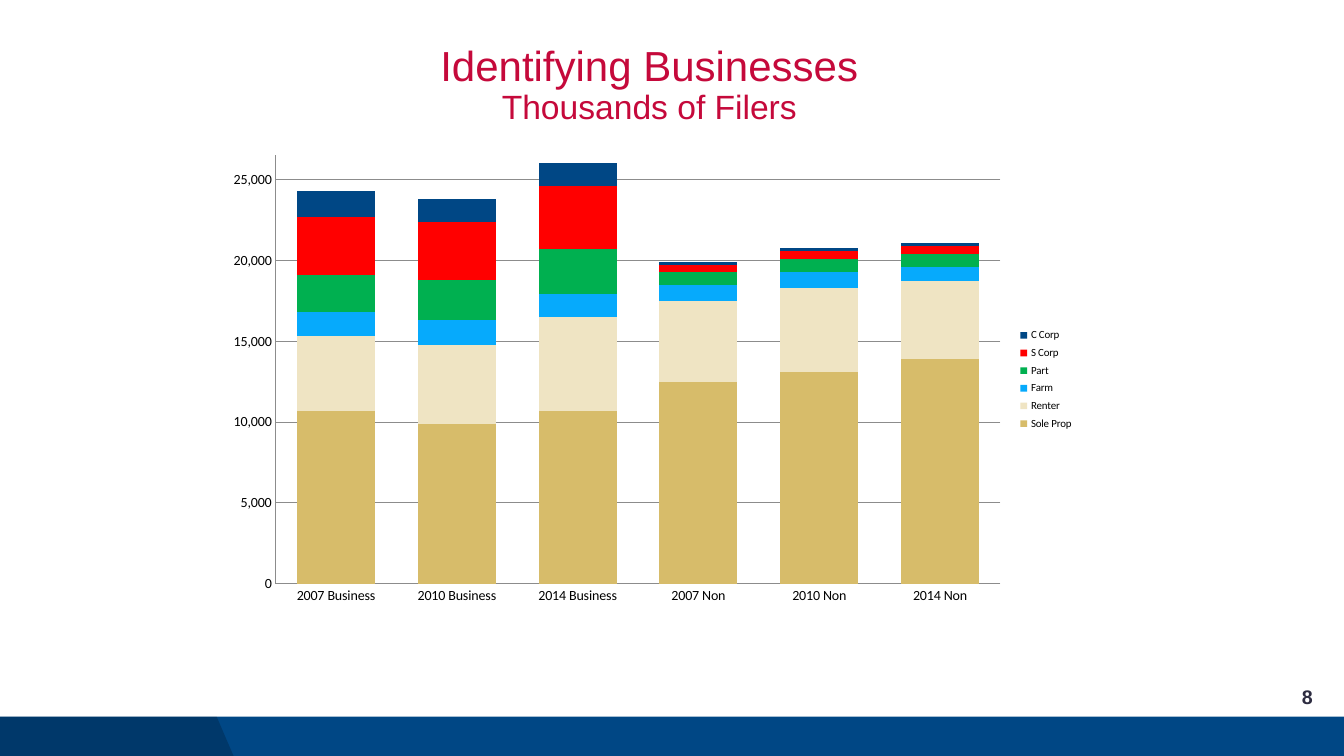
"""Build the slide on identifying businesses by thousands of filers."""
from lxml import etree
from pptx import Presentation, util as u
from pptx.chart.data import CategoryChartData
from pptx.dml.color import RGBColor
from pptx.enum import chart as ch, shapes, text
from pptx.oxml.ns import qn

W, H = u.Inches(13.33), u.Inches(7.5)
COLORS = {
    "title": "C5093B", "number": "2D2C41", "text": "000000", "line": "8C8C8C",
    "band": "004785", "shade": "000000",
    "Sole Prop": "D7BC6A", "Renter": "EFE4C3", "Farm": "06AAFC",
    "Part": "00B050", "S Corp": "FF0000", "C Corp": "004785",
}
CATEGORIES = ["2007 Business", "2010 Business", "2014 Business",
              "2007 Non", "2010 Non", "2014 Non"]
FILERS = {
    "Sole Prop": [10700, 9900, 10700, 12500, 13100, 13900],
    "Renter": [4600, 4900, 5800, 5000, 5200, 4800],
    "Farm": [1500, 1500, 1400, 1000, 1000, 900],
    "Part": [2300, 2500, 2800, 800, 800, 800],
    "S Corp": [3600, 3600, 3900, 400, 500, 500],
    "C Corp": [1600, 1400, 1400, 200, 200, 200],
}


def share(x, y):
    """Turn percentages of the slide's width and height into lengths."""
    return int(W * x / 100), int(H * y / 100)


def box(x, y, w, h):
    """Give left, top, width and height from percentages of the slide."""
    return *share(x, y), *share(w, h)


def rgb(name):
    """Look up a named colour."""
    return RGBColor.from_string(COLORS[name])


def set_all(obj, values):
    """Set attributes from a dict of format values."""
    for name, value in values.items():
        setattr(obj, name, value)


def set_font(font, color, **values):
    """Set a font's colour and other format values."""
    set_all(font, values)
    font.color.rgb = rgb(color)


def paint(sp, color, opacity=None):
    """Fill a shape without line or shadow, optionally see-through."""
    sp.shadow.inherit = False
    sp.fill.solid()
    sp.fill.fore_color.rgb = rgb(color)
    sp.line.fill.background()
    if opacity:
        clr = sp._element.spPr.find(qn("a:solidFill"))[0]
        etree.SubElement(clr, qn("a:alpha"), val=str(opacity * 1000))


def add_footer(s):
    """Draw the bottom band and its darker slanted end."""
    left, top, width, height = box(0, 94.8, 100, 5.6)
    band = s.shapes.add_shape(shapes.MSO_SHAPE.RECTANGLE, left, top, width, height)
    paint(band, "band")
    corners = [share(x, y) for x, y in
               [(0, 94.8), (16.13, 94.8), (17.48, 100.4), (0, 100.4)]]
    fb = s.shapes.build_freeform(*corners[0])
    fb.add_line_segments(corners[1:], close=True)
    paint(fb.convert_to_shape(), "shade", 20)


def add_text(s, place, lines, color, frame, para, **font):
    """Add a text box whose lines, each with its size, share one paragraph."""
    tf = s.shapes.add_textbox(*place).text_frame
    set_all(tf, {"word_wrap": True, **frame})
    p = tf.paragraphs[0]
    set_all(p, para)
    for i, (line, size) in enumerate(lines):
        if i:
            p.add_line_break()
        r = p.add_run()
        r.text = line
        set_font(r.font, color, name="Arial", size=u.Pt(size), **font)


def fix_plot(chart, **shares):
    """Pin the inner plot area to shares of the chart."""
    area = chart._chartSpace.chart.plotArea
    for old in area.findall(qn("c:layout")):
        area.remove(old)
    layout = etree.Element(qn("c:layout"))
    area.insert(0, layout)
    manual = etree.SubElement(layout, qn("c:manualLayout"))
    values = {"layoutTarget": "inner", "xMode": "edge", "yMode": "edge", **shares}
    for tag, value in values.items():
        etree.SubElement(manual, qn("c:" + tag), val=str(value))


def add_filers_chart(s, place):
    """Add the stacked columns of filers by business type."""
    data = CategoryChartData(number_format="#,##0")
    data.categories = CATEGORIES
    for name, values in FILERS.items():
        data.add_series(name, values)
    chart = s.shapes.add_chart(ch.XL_CHART_TYPE.COLUMN_STACKED, *place, data).chart
    set_all(chart, {"has_title": False, "has_legend": True})
    set_font(chart.font, "text", name="Calibri", size=u.Pt(10))
    set_all(chart.legend, {"position": ch.XL_LEGEND_POSITION.RIGHT,
                           "include_in_layout": False})
    set_font(chart.legend.font, "text", name="Calibri", size=u.Pt(7.8))
    plot = chart.plots[0]
    set_all(plot, {"gap_width": 55, "overlap": 100, "vary_by_categories": False})
    for series in plot.series:
        series.format.fill.solid()
        series.format.fill.fore_color.rgb = rgb(series.name)
    value_axis = chart.value_axis
    set_all(value_axis, {"minimum_scale": 0, "maximum_scale": 26500,
                         "major_unit": 5000, "has_major_gridlines": True})
    set_all(value_axis.tick_labels, {"number_format": "#,##0",
                                     "number_format_is_linked": False})
    for axis in (chart.category_axis, value_axis):
        set_all(axis, {"major_tick_mark": ch.XL_TICK_MARK.NONE,
                       "minor_tick_mark": ch.XL_TICK_MARK.NONE})
        set_font(axis.tick_labels.font, "text", name="Calibri", size=u.Pt(10))
    for part in (chart.category_axis, value_axis, value_axis.major_gridlines):
        part.format.line.color.rgb = rgb("line")
        part.format.line.width = u.Pt(0.75)
    fix_plot(chart, x=0.07, y=0.02, w=0.834, h=0.918)


def main():
    """Build and save the slide."""
    prs = Presentation()
    set_all(prs, {"slide_width": W, "slide_height": H})
    s = prs.slides.add_slide(prs.slide_layouts[6])
    add_footer(s)
    add_text(s, box(15.98, 5.33, 64.67, 12.27),
             [("Identifying Businesses", 30), ("Thousands of Filers", 24)], "title",
             {"margin_left": 0, "margin_right": 0},
             {"alignment": text.PP_ALIGN.CENTER, "line_spacing": 0.9})
    add_text(s, box(75.92, 89.47, 22.5, 5.33), [("8", 14)], "number",
             {"vertical_anchor": text.MSO_ANCHOR.MIDDLE},
             {"alignment": text.PP_ALIGN.RIGHT}, bold=True)
    add_filers_chart(s, box(15.98, 19.33, 64.67, 61.73))
    prs.save("out.pptx")


if __name__ == "__main__":
    main()
